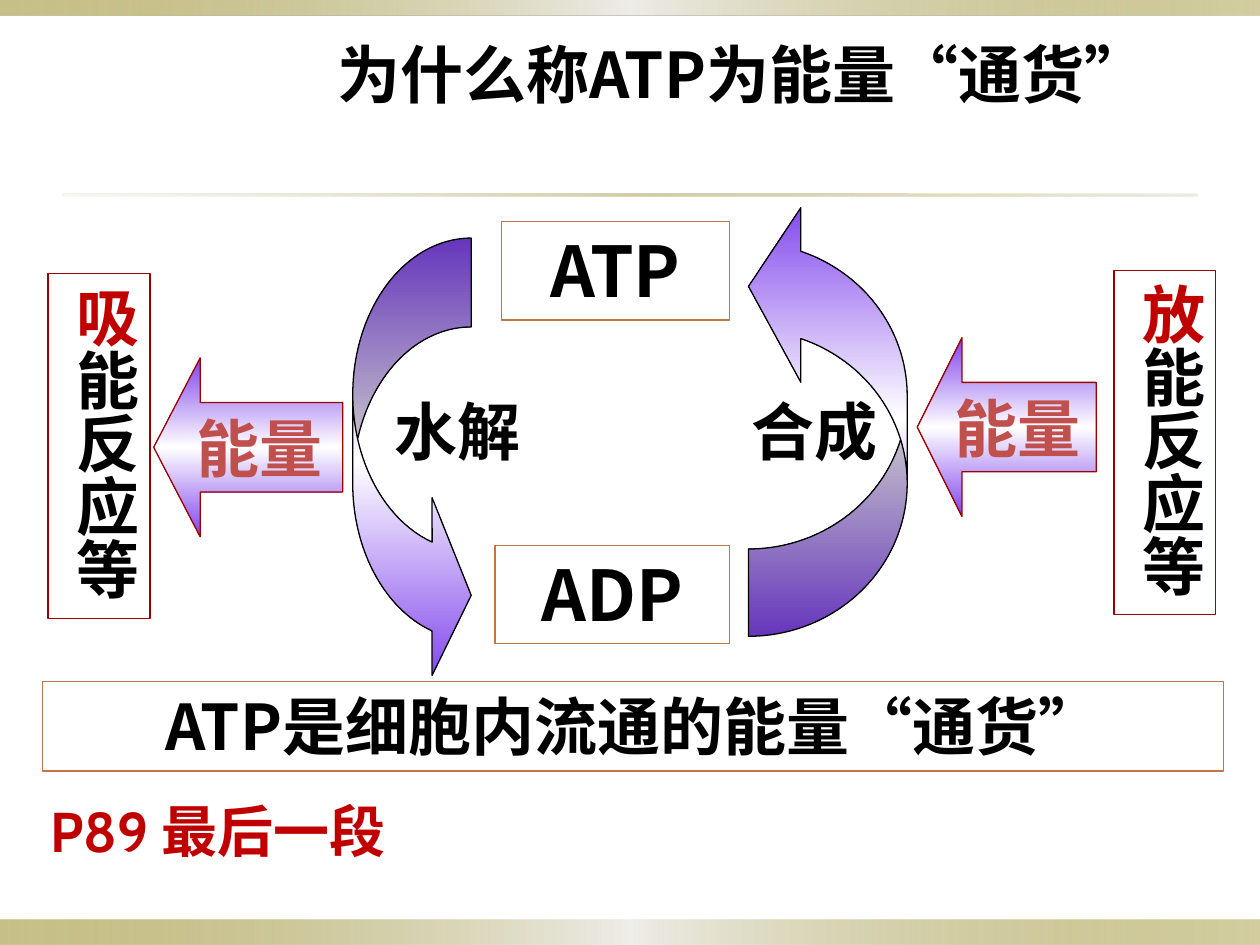
from lxml import etree
from pptx import Presentation
from pptx.dml.color import RGBColor
from pptx.enum import shapes, text
from pptx.oxml import ns
from pptx.util import Inches, Pt

BLACK = RGBColor(0x00, 0x00, 0x00)
RED = RGBColor(0xC0, 0x00, 0x00)
BRICK = RGBColor(0xC0, 0x50, 0x4D)
MAROON = RGBColor(0x99, 0x00, 0x00)
COPPER = RGBColor(0xC4, 0x75, 0x46)
VIOLET = RGBColor(0x80, 0x44, 0xEC)
WHITE = RGBColor(0xFF, 0xFF, 0xFF)
OLIVE = RGBColor(0x91, 0x84, 0x15)
PALE = RGBColor(0xEE, 0xED, 0xE8)
SAND = RGBColor(0xDC, 0xD9, 0xCC)

HEAVY = "Noto Sans CJK SC"
SHEEN = [(VIOLET, 100), (WHITE, 100), (VIOLET, 100)]
BAND = [(OLIVE, 50), (PALE, 100), (OLIVE, 40)]
RULE = [(SAND, 20), (OLIVE, 40), (SAND, 50)]

SHAPE = shapes.MSO_SHAPE
CENTER = text.PP_ALIGN.CENTER
JUSTIFY = text.PP_ALIGN.JUSTIFY


def fill_gradient(shape, stops, angle):
    """Fill with evenly spaced (colour, opacity in percent) stops."""
    shape.fill.gradient()
    gradient = shape._element.spPr.find(ns.qn("a:gradFill"))
    stop_list = gradient.find(ns.qn("a:gsLst"))
    for old in list(stop_list):
        stop_list.remove(old)
    for index, (color, opacity) in enumerate(stops):
        position = 100000 * index // (len(stops) - 1)
        stop = etree.SubElement(stop_list, ns.qn("a:gs"), pos=str(position))
        tone = etree.SubElement(stop, ns.qn("a:srgbClr"), val=str(color))
        if opacity < 100:
            etree.SubElement(tone, ns.qn("a:alpha"), val=str(opacity * 1000))
    gradient.find(ns.qn("a:lin")).set("ang", str(angle * 60000))


def add_figure(page, kind, box, line=None, stops=None, angle=90):
    figure = page.shapes.add_shape(kind, *map(Inches, box))
    figure.shadow.inherit = False
    if stops:
        fill_gradient(figure, stops, angle)
    else:
        figure.fill.background()
    if line is None:
        figure.line.fill.background()
    else:
        figure.line.color.rgb = line
        figure.line.width = Pt(0.75)
    return figure


def write(shape, parts, size=36, align=None, font=HEAVY,
          anchor=text.MSO_ANCHOR.TOP, wrap=True):
    """Write one bold paragraph from (wording, colour) parts."""
    frame = shape.text_frame
    frame.word_wrap = wrap
    frame.vertical_anchor = anchor
    para = frame.paragraphs[0]
    para.alignment = align
    para.font.size = Pt(size)
    para.font.bold = True
    para.font.name = font
    for wording, color in parts:
        span = para.add_run()
        span.text = wording
        span.font.color.rgb = color
        east_asian = etree.SubElement(span.font._element, ns.qn("a:ea"))
        east_asian.set("typeface", HEAVY)


def add_label(page, box, wording, color=BLACK, **style):
    label = page.shapes.add_textbox(*map(Inches, box))
    write(label, [(wording, color)], **style)


def add_framed_text(page, box, wording, size=36):
    frame = add_figure(page, SHAPE.RECTANGLE, box, COPPER)
    write(frame, [(wording, BLACK)], size, CENTER)


def add_reaction(page, box, first, rest):
    """Vertical box whose first character is red."""
    frame = add_figure(page, SHAPE.RECTANGLE, box, MAROON)
    write(frame, [(first, RED), (rest, BLACK)], align=CENTER)
    frame.text_frame._txBody.bodyPr.set("vert", "eaVert")


def add_energy_arrow(page, box, head):
    arrow = add_figure(page, SHAPE.LEFT_ARROW, box, MAROON, SHEEN)
    arrow.adjustments[1] = head
    write(arrow, [("能量", BRICK)], align=CENTER,
          anchor=text.MSO_ANCHOR.MIDDLE, wrap=False)


def add_curved_arrow(page, box, adjustments, rotation=0):
    arrow = add_figure(page, SHAPE.CURVED_RIGHT_ARROW, box, BLACK, SHEEN)
    arrow.rotation = rotation
    for index, value in enumerate(adjustments):
        arrow.adjustments[index] = value


def add_backdrop(page):
    for box, stops in (((0, 7.3, 10, 0.2), BAND),
                       ((0, 0, 10, 0.12), BAND),
                       ((0.5, 1.54, 9, 0.02), RULE)):
        add_figure(page, SHAPE.RECTANGLE, box, stops=stops, angle=0)


def add_cycle(page):
    add_framed_text(page, (3.98, 1.76, 1.81, 0.78), "ATP", 40)
    add_framed_text(page, (3.93, 4.33, 1.86, 0.78), "ADP", 40)
    add_curved_arrow(page, (2.8, 1.89, 0.94, 3.54), (0.75, 1.5, 0.33))
    add_curved_arrow(page, (5.94, 1.58, 1.26, 3.47), (0.55, 1.1, 0.33), 180)
    for left, step in ((3.03, "水解"), (5.87, "合成")):
        add_label(page, (left, 3.07, 1.26, 0.7), step, align=JUSTIFY)


def add_energy_flow(page):
    add_reaction(page, (0.38, 2.17, 0.81, 2.74), "吸", "能反应等")
    add_reaction(page, (8.84, 2.15, 0.81, 2.73), "放", "能反应等")
    add_energy_arrow(page, (1.22, 2.84, 1.5, 1.42), 0.26)
    add_energy_arrow(page, (7.28, 2.68, 1.42, 1.42), 0.25)


def main():
    deck = Presentation()
    deck.slide_width, deck.slide_height = Inches(10), Inches(7.5)
    page = deck.slides.add_slide(deck.slide_layouts[6])
    add_backdrop(page)
    add_cycle(page)
    add_energy_flow(page)
    add_framed_text(page, (0.34, 5.41, 9.37, 0.71),
                    "ATP是细胞内流通的能量“通货”")
    add_label(page, (2.58, 0.23, 6.83, 0.71), "为什么称ATP为能量“通货”")
    add_label(page, (0.3, 6.27, 2.89, 0.64), "P89 最后一段", RED,
              size=32, font="Cabin")
    deck.save("out.pptx")


if __name__ == "__main__":
    main()
